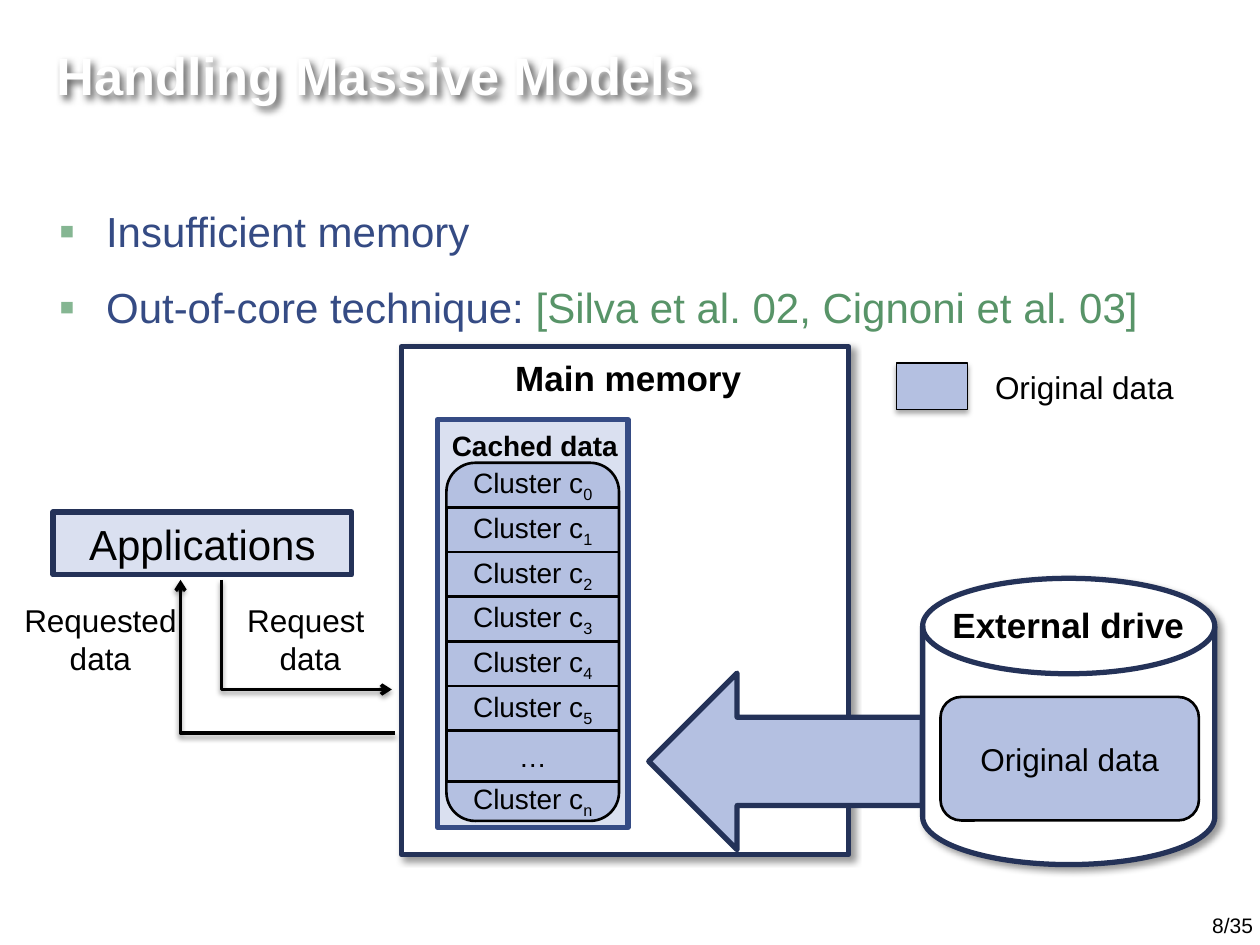
"""Build the slide on out-of-core handling of massive models."""
from dataclasses import dataclass
from typing import Optional

import lxml.etree
import pptx
import pptx.dml.color
import pptx.enum.shapes
import pptx.enum.text
import pptx.oxml
import pptx.oxml.ns
import pptx.util

Cm = pptx.util.Cm
Pt = pptx.util.Pt
RGBColor = pptx.dml.color.RGBColor
SHAPE = pptx.enum.shapes.MSO_SHAPE
ALIGN = pptx.enum.text.PP_ALIGN
ANCHOR = pptx.enum.text.MSO_ANCHOR
qn = pptx.oxml.ns.qn

FONT = "Arial"
WHITE = RGBColor(0xFF, 0xFF, 0xFF)
BLACK = RGBColor(0x00, 0x00, 0x00)
NAVY = RGBColor(0x24, 0x32, 0x58)
BLUE = RGBColor(0x35, 0x4B, 0x84)
GREEN = RGBColor(0x58, 0x94, 0x68)
PALE = RGBColor(0xDA, 0xE0, 0xF0)
PERIWINKLE = RGBColor(0xB4, 0xC0, 0xE1)
BULLET_GREEN = "85B692"


@dataclass(frozen=True)
class Shadow:
    alpha: int
    blur: float
    dist: float
    angle: int


@dataclass(frozen=True)
class Box:
    x: float
    y: float
    w: float
    h: float
    text: str = ""
    sub: str = ""
    size: int = 18
    bold: bool = False
    color: RGBColor = BLACK
    align: ALIGN = ALIGN.CENTER
    anchor: ANCHOR = ANCHOR.MIDDLE
    wrap: bool = True
    inset: float = 0.25
    shape: Optional[SHAPE] = None
    fill: Optional[RGBColor] = None
    line: RGBColor = BLACK
    weight: float = 1.5
    shadow: Optional[Shadow] = None


@dataclass(frozen=True)
class Elbow:
    x1: float
    y1: float
    x2: float
    y2: float
    end: str


TITLE_SHADOW = Shadow(60, 4, 3, 45)
PANEL_SHADOW = Shadow(40, 4, 3, 45)
LEGEND_SHADOW = Shadow(35, 3.1, 1.8, 90)
ARROW_SHADOW = Shadow(38, 3.1, 1.6, 90)

CACHE_X, CACHE_Y, CACHE_W, ROW_H = 9, 9.33, 3.48, 0.9
ROWS = 6

TITLE = Box(0.89, 0.66, 23.47, 1.68, "Handling Massive Models", size=30, bold=True,
            color=WHITE, align=ALIGN.LEFT, shadow=TITLE_SHADOW)
BULLETS = (
    (("Insufficient memory", BLUE),),
    (("Out-of-core technique: ", BLUE), ("[Silva et al. 02, Cignoni et al. 03]", GREEN)),
)


def cluster(row: int) -> Box:
    """Return one cluster row of the cache; the first has no outline of its own."""
    return Box(CACHE_X, CACHE_Y + row * ROW_H, CACHE_W, ROW_H, "Cluster c", str(row), size=16,
               shape=SHAPE.RECTANGLE if row else None)


BOXES = (
    Box(8.09, 6.99, 9.02, 10.24, shape=SHAPE.RECTANGLE, fill=WHITE, line=NAVY, weight=3,
        shadow=PANEL_SHADOW),
    Box(10.11, 7.06, 5.11, 1.12, "Main memory", size=20, bold=True, anchor=ANCHOR.TOP, wrap=False),
    Box(1.07, 10.32, 6.02, 1.27, "Applications", size=24, shape=SHAPE.RECTANGLE, fill=PALE,
        line=NAVY, weight=3),
    Box(18.6, 11.66, 5.89, 5.77, shape=SHAPE.FLOWCHART_MAGNETIC_DISK, fill=WHITE, line=NAVY,
        weight=3, shadow=PANEL_SHADOW),
    Box(18.95, 12.04, 5.21, 1.12, "External drive", size=20, bold=True, align=ALIGN.LEFT,
        anchor=ANCHOR.TOP, wrap=False),
    Box(18.96, 14.05, 5.21, 2.49, "Original data", shape=SHAPE.ROUNDED_RECTANGLE, fill=PERIWINKLE),
    Box(8.82, 8.46, 3.84, 8.22, shape=SHAPE.RECTANGLE, fill=PALE, line=BLUE, weight=3),
    Box(8.86, 8.51, 4.2, 0.94, "Cached data", size=16, bold=True, align=ALIGN.LEFT,
        anchor=ANCHOR.TOP),
    Box(CACHE_X, CACHE_Y, CACHE_W, 7.22, shape=SHAPE.ROUNDED_RECTANGLE, fill=PERIWINKLE),
    Box(13.08, 13.57, 5.51, 3.56, shape=SHAPE.LEFT_ARROW, fill=PERIWINKLE, line=NAVY, weight=3),
    *(cluster(row) for row in range(ROWS)),
    Box(CACHE_X, CACHE_Y + ROWS * ROW_H, CACHE_W, 1.02, "…", size=16, shape=SHAPE.RECTANGLE),
    Box(CACHE_X, 15.62, CACHE_W, 1.02, "Cluster c", "n", size=16),
    Box(0.22, 11.99, 3.61, 1.8, "Requested\ndata", anchor=ANCHOR.TOP, wrap=False),
    Box(4.72, 11.99, 3.07, 1.8, "Request \ndata", anchor=ANCHOR.TOP, wrap=False),
    Box(18.08, 7.32, 1.42, 0.94, shape=SHAPE.RECTANGLE, fill=PERIWINKLE, weight=0.75,
        shadow=LEGEND_SHADOW),
    Box(19.81, 7.29, 4.14, 1.02, "Original data", align=ALIGN.LEFT, anchor=ANCHOR.TOP),
    Box(19.58, 18.01, 5.82, 1.02, "8/35", size=12, align=ALIGN.RIGHT, anchor=ANCHOR.BOTTOM,
        inset=0.14),
)
ELBOWS = (
    Elbow(3.64, 11.69, 7.97, 14.78, "headEnd"),
    Elbow(4.47, 11.69, 7.9, 13.9, "tailEnd"),
)


def effect_list(shadow: Shadow) -> lxml.etree._Element:
    """Return an effect list that holds one black outer shadow."""
    return pptx.oxml.parse_xml(
        f'<a:effectLst {pptx.oxml.ns.nsdecls("a")}><a:outerShdw blurRad="{Pt(shadow.blur)}" '
        f'dist="{Pt(shadow.dist)}" dir="{shadow.angle * 60000}" algn="tl" rotWithShape="0">'
        f'<a:srgbClr val="000000"><a:alpha val="{shadow.alpha * 1000}"/></a:srgbClr>'
        '</a:outerShdw></a:effectLst>')


def add_run(p, text: str, size: int, color: RGBColor, bold: bool = False):
    """Add one formatted run to a paragraph."""
    r = p.add_run()
    r.text = text
    r.font.size = Pt(size)
    r.font.bold = bold
    r.font.color.rgb = color
    r.font.name = FONT
    return r


def add_box(s, box: Box) -> None:
    """Draw a shape or text box with its text."""
    frame = (Cm(box.x), Cm(box.y), Cm(box.w), Cm(box.h))
    if box.shape is None:
        sp = s.shapes.add_textbox(*frame)
    else:
        sp = s.shapes.add_shape(box.shape, *frame)
        if box.fill is None:
            sp.fill.background()
        else:
            sp.fill.solid()
            sp.fill.fore_color.rgb = box.fill
        sp.line.color.rgb = box.line
        sp.line.width = Pt(box.weight)
    sp.shadow.inherit = False
    if box.shadow:
        sp._element.spPr.find(qn("a:effectLst")).extend(effect_list(box.shadow))
    if not box.text:
        return
    tf = sp.text_frame
    tf.word_wrap = box.wrap
    tf.vertical_anchor = box.anchor
    tf.margin_left = tf.margin_right = Cm(box.inset)
    for i, text in enumerate(box.text.split("\n")):
        p = tf.add_paragraph() if i else tf.paragraphs[0]
        p.alignment = box.align
        add_run(p, text, box.size, box.color, box.bold)
        if box.sub:
            r = add_run(p, box.sub, box.size, box.color)
            r._r.rPr.set("baseline", "-25000")


def add_bullets(s) -> None:
    """Write the bulleted statements."""
    tf = s.shapes.add_textbox(Cm(0.94), Cm(3.91), Cm(23.39), Cm(14.48)).text_frame
    tf.word_wrap = True
    for i, runs in enumerate(BULLETS):
        p = tf.add_paragraph() if i else tf.paragraphs[0]
        pPr = p._p.get_or_add_pPr()
        pPr.set("marL", str(Cm(0.95)))
        pPr.set("indent", str(-Cm(0.95)))
        color = lxml.etree.SubElement(pPr, qn("a:buClr"))
        lxml.etree.SubElement(color, qn("a:srgbClr"), val=BULLET_GREEN)
        lxml.etree.SubElement(pPr, qn("a:buSzPct"), val="110000")
        lxml.etree.SubElement(pPr, qn("a:buFont"), typeface=FONT)
        lxml.etree.SubElement(pPr, qn("a:buChar"), char="▪")
        p.line_spacing = 1.1
        p.space_before = Pt(6 if i else 0)
        p.space_after = Pt(6)
        for text, text_color in runs:
            add_run(p, text, 24, text_color)


def add_elbow(s, elbow: Elbow) -> None:
    """Draw an arrow that runs down first and then right."""
    sp = s.shapes.add_connector(pptx.enum.shapes.MSO_CONNECTOR.ELBOW, Cm(elbow.x1), Cm(elbow.y1),
                                Cm(elbow.x2), Cm(elbow.y2))
    sp.line.color.rgb = BLACK
    sp.line.width = Pt(2)
    spPr = sp._element.spPr
    guides = spPr.find(qn("a:prstGeom")).find(qn("a:avLst"))
    lxml.etree.SubElement(guides, qn("a:gd"), name="adj1", fmla="val 0")
    lxml.etree.SubElement(spPr.find(qn("a:ln")), qn(f"a:{elbow.end}"), type="arrow")
    spPr.append(effect_list(ARROW_SHADOW))


def main() -> None:
    """Build and save the presentation."""
    prs = pptx.Presentation()
    prs.slide_width, prs.slide_height = Cm(25.4), Cm(19.05)
    s = prs.slides.add_slide(prs.slide_layouts[6])
    add_box(s, TITLE)
    add_bullets(s)
    for box in BOXES:
        add_box(s, box)
    for elbow in ELBOWS:
        add_elbow(s, elbow)
    prs.save("out.pptx")


if __name__ == "__main__":
    main()
